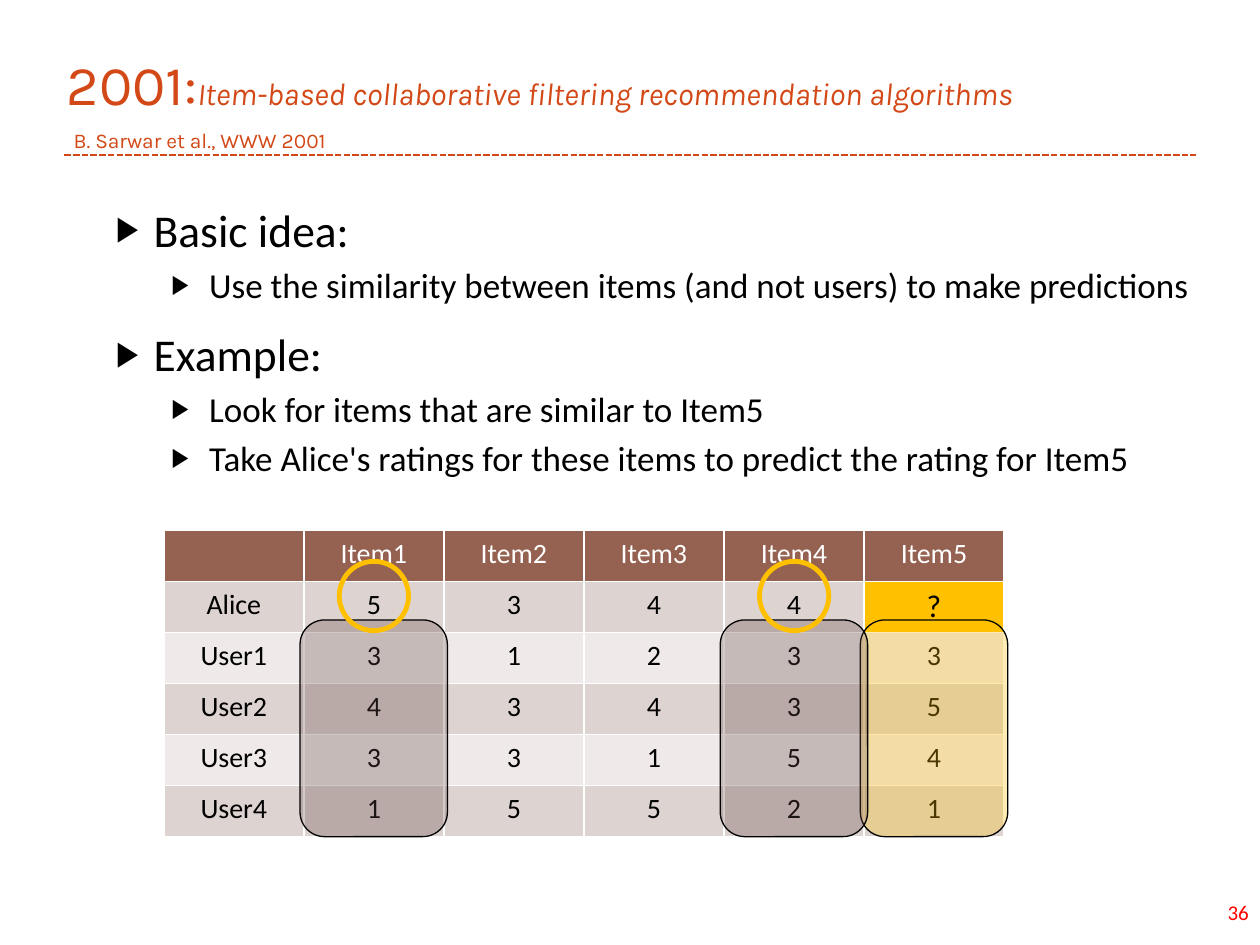
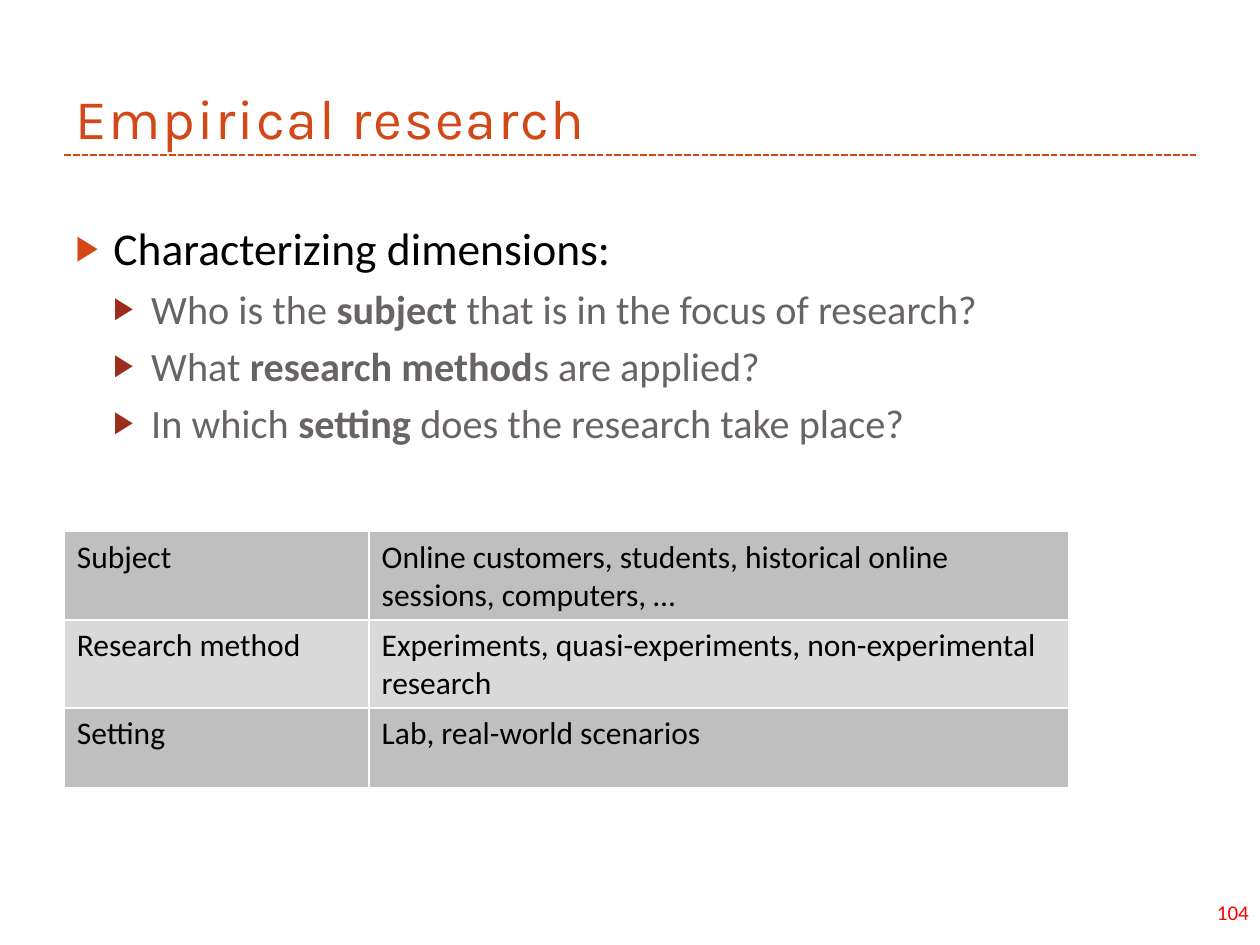
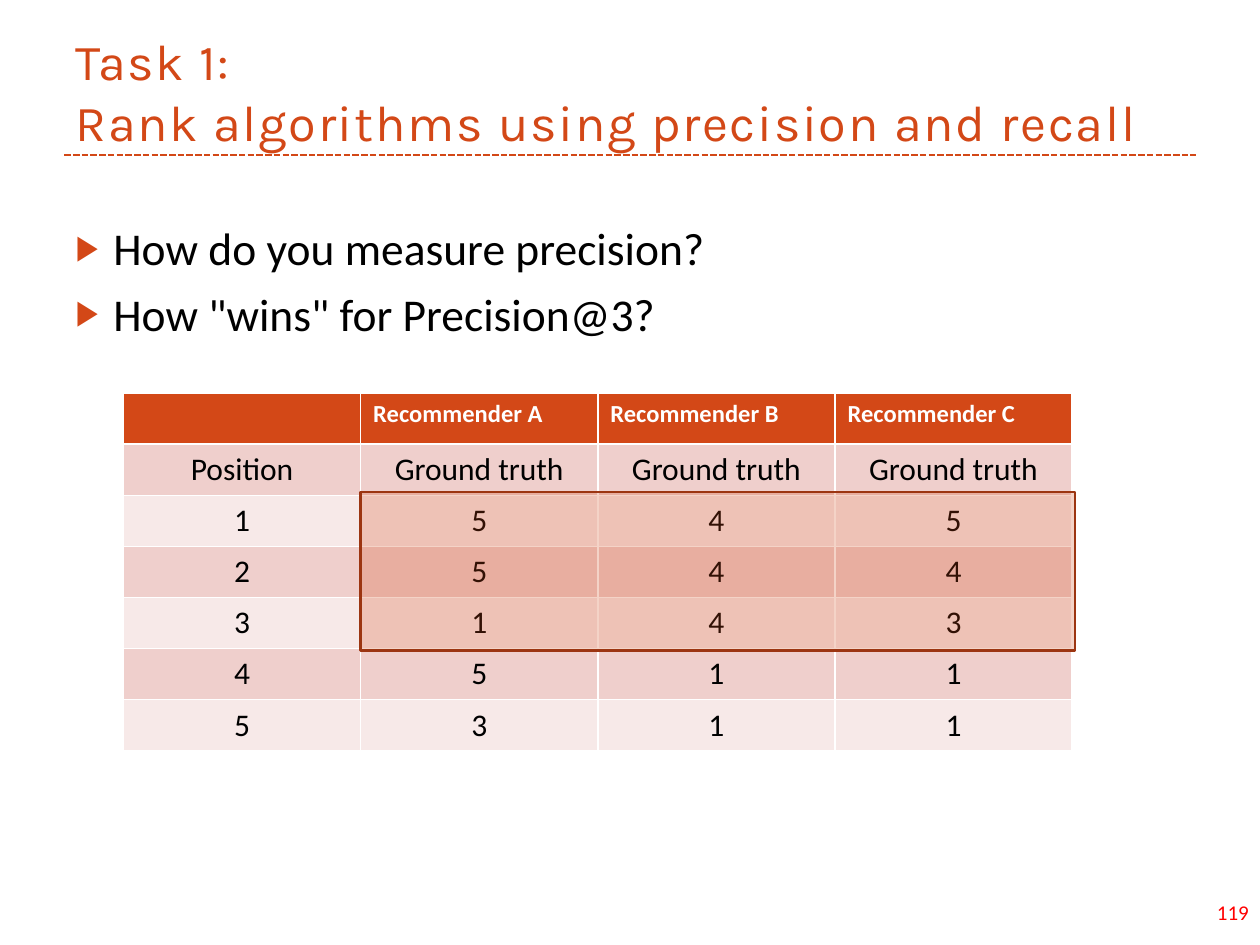
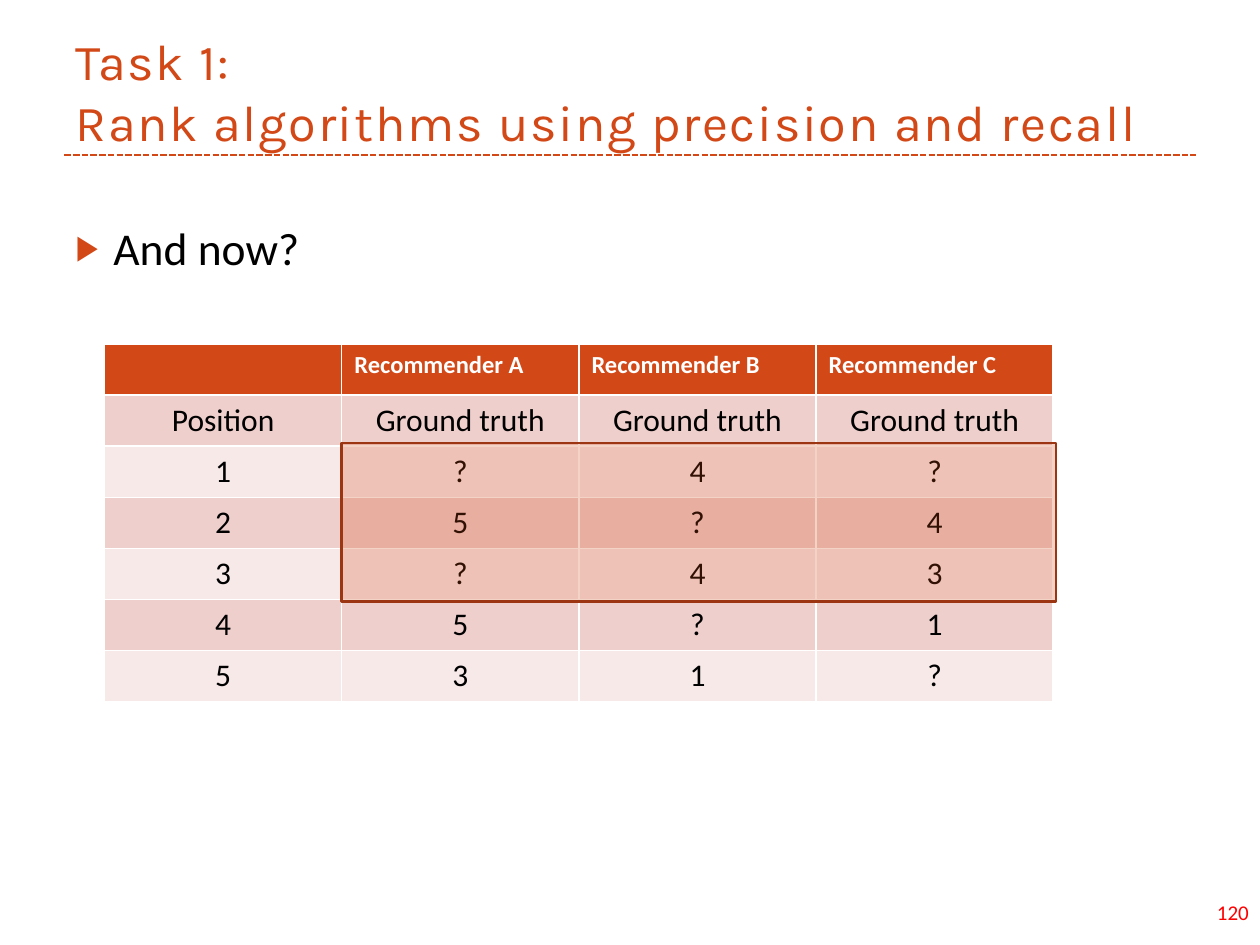
from collections import namedtuple

from lxml import etree
from pptx import Presentation
from pptx import util as u
from pptx.dml import color
from pptx.enum import dml, shapes, text
from pptx.oxml import ns

Box = namedtuple("Box", "left top width height")
Style = namedtuple("Style", "head bands head_size size head_bold head_align align")

WIDTH, HEIGHT = u.Inches(10), u.Inches(7.5)
COLUMNS = 100
ORANGE, RUST, GREY, BROWN = "D34817", "9B2D1F", "696464", "644646"
GOLD, BLACK, WHITE, RED = "FFC000", "000000", "FFFFFF", "FF0000"
BODY_FONT, TITLE_FONT = "Calibri", "Karla"
CENTER, LEFT = text.PP_ALIGN.CENTER, text.PP_ALIGN.LEFT

TITLE_BOX = Box(5, 1.7, 90, 10.8)
BODY_BOX = Box(5, 17, 90, 54)
NUMBER_BOX = Box(87.3, 70.9, 12.8, 3)
RULE_BOX = Box(5.1, 12.3, 89.8, 0)

RATINGS = Style("956251", ("DDD3D0", "EFEAE9"), 16, 16, False, CENTER, CENTER)
PLAIN = Style(None, ("BFBFBF", "D9D9D9"), 18, 18, False, LEFT, LEFT)
RANKING = Style(ORANGE, ("EFCFCC", "F7E9E8"), 14, 18, True, LEFT, CENTER)

TASK_TITLE = [[("Task 1: ", 28.8, False)],
              [("Rank algorithms using precision and recall", 28.8, False)]]


def rgb(value):
    """Turn a hex string into a colour."""
    return color.RGBColor.from_string(value)


def grid(*cells):
    """Turn grid columns into slide lengths."""
    return [round(WIDTH * cell / COLUMNS) for cell in cells]


def set_font(font, name, size, hex_color, bold=None):
    """Format a paragraph or span font."""
    font.name, font.size, font.bold = name, u.Pt(size), bold
    font.color.rgb = rgb(hex_color)


def place(shape, box):
    """Move a shape to its box."""
    shape.left, shape.top, shape.width, shape.height = grid(*box)


def add_title(page, box, lines, spacing):
    """Fill the title placeholder with lines of (words, size, italic)."""
    place(page.shapes.title, box)
    frame = page.shapes.title.text_frame
    frame.auto_size = text.MSO_AUTO_SIZE.NONE
    frame.vertical_anchor = text.MSO_ANCHOR.BOTTOM
    para = frame.paragraphs[0]
    para.alignment = LEFT
    set_font(para.font, TITLE_FONT, lines[0][0][1], ORANGE)
    for index, line in enumerate(lines):
        if index:
            para.add_line_break()
        for words, size, italic in line:
            span = para.add_run()
            span.text = words
            set_font(span.font, TITLE_FONT, size, ORANGE)
            span.font.italic = italic
            span.font._element.set("spc", str(spacing))


def add_bullet(para, indent, hang, hex_color):
    """Give a paragraph a triangle bullet and a hanging indent."""
    props = para._p.get_or_add_pPr()
    props.set("marL", str(grid(indent)[0]))
    props.set("indent", str(-grid(hang)[0]))
    tint = etree.SubElement(props, ns.qn("a:buClr"))
    etree.SubElement(tint, ns.qn("a:srgbClr"), val=hex_color)
    etree.SubElement(props, ns.qn("a:buSzPct"), val="76000")
    etree.SubElement(props, ns.qn("a:buChar"), char="▶")


def add_list(page, box, items, levels):
    """Fill the body placeholder with (level, words); *stars* mark bold."""
    body = page.placeholders[1]
    place(body, box)
    frame = body.text_frame
    frame.auto_size = text.MSO_AUTO_SIZE.NONE
    for index, (level, words) in enumerate(items):
        size, hex_color, bullet_color, indent, gap = levels[level]
        para = frame.add_paragraph() if index else frame.paragraphs[0]
        para.level = level
        para.space_before = u.Pt(gap if index else 0)
        add_bullet(para, indent, 3, bullet_color)
        set_font(para.font, BODY_FONT, size, hex_color)
        for part, piece in enumerate(words.split("*")):
            span = para.add_run()
            span.text = piece
            if part % 2:
                span.font.bold = True


def add_number(page, box, number):
    """Write the slide number."""
    label = page.shapes.add_textbox(*grid(*box))
    label.text_frame.word_wrap = True
    para = label.text_frame.paragraphs[0]
    para.text = str(number)
    para.alignment = text.PP_ALIGN.RIGHT
    set_font(para.font, BODY_FONT, 12, RED)


def add_rule(page, box):
    """Draw the dashed line under the title."""
    left, top, width, height = grid(*box)
    rule = page.shapes.add_connector(
        shapes.MSO_CONNECTOR.STRAIGHT, left, top, left + width, top + height)
    rule.line.color.rgb = rgb(ORANGE)
    rule.line.width = u.Pt(1.25)
    rule.line.dash_style = dml.MSO_LINE.SQUARE_DOT
    etree.SubElement(rule._element.spPr, ns.qn("a:effectLst"))


def add_page(deck, number, title, items, levels,
             title_box=TITLE_BOX, body_box=BODY_BOX, spacing=100):
    """Add a slide with the shared title, rule, list and number."""
    page = deck.slides.add_slide(deck.slide_layouts[1])
    add_rule(page, RULE_BOX)
    add_number(page, NUMBER_BOX, number)
    add_list(page, body_box, items, levels)
    add_title(page, title_box, title, spacing)
    return page


def add_grid_table(page, box, rows, style, shares=None):
    """Add a table whose columns split the box by shares."""
    shares = shares or [1] * len(rows[0])
    table = page.shapes.add_table(len(rows), len(shares), *grid(*box)).table
    table.first_row = style.head is not None
    for column, share in zip(table.columns, shares):
        column.width = grid(box.width * share / sum(shares))[0]
    for r, row in enumerate(rows):
        is_head = table.first_row and r == 0
        band = style.bands[(r - table.first_row) % 2]
        for c, words in enumerate(row):
            cell = table.cell(r, c)
            cell.fill.solid()
            cell.fill.fore_color.rgb = rgb(style.head if is_head else band)
            para = cell.text_frame.paragraphs[0]
            para.text = words
            para.alignment = style.head_align if is_head else style.align
            set_font(para.font, BODY_FONT,
                     style.head_size if is_head else style.size,
                     WHITE if is_head else BLACK,
                     is_head and style.head_bold)
    return table


def add_mark(page, kind, box, line, weight, fill=None, opacity=0):
    """Draw a see-through outline over table cells."""
    mark = page.shapes.add_shape(kind, *grid(*box))
    mark.shadow.inherit = False
    mark.line.color.rgb = rgb(line)
    mark.line.width = u.Pt(weight)
    if fill is None:
        mark.fill.background()
        return
    mark.fill.solid()
    mark.fill.fore_color.rgb = rgb(fill)
    tint = mark._element.spPr.find(ns.qn("a:solidFill"))[0]
    etree.SubElement(tint, ns.qn("a:alpha"), val=str(opacity * 1000))


def add_ratings(page, box):
    """Show the rating table with the similar items marked."""
    rows = [["", "Item1", "Item2", "Item3", "Item4", "Item5"],
            ["Alice", "5", "3", "4", "4", "?"],
            ["User1", "3", "1", "2", "3", "3"],
            ["User2", "4", "3", "4", "3", "5"],
            ["User3", "3", "3", "1", "5", "4"],
            ["User4", "1", "5", "5", "2", "1"]]
    table = add_grid_table(page, box, rows, RATINGS)
    unknown = table.cell(1, 5)
    unknown.fill.fore_color.rgb = rgb(GOLD)
    unknown.text_frame.paragraphs[0].font.size = u.Pt(18)
    column = box.width / len(rows[0])
    for index, fill in ((5, GOLD), (1, BROWN), (4, BROWN)):
        column_box = Box(box.left + index * column - 0.3, box.top + 7.1, 11.7, 17.2)
        add_mark(page, shapes.MSO_SHAPE.ROUNDED_RECTANGLE, column_box,
                 BLACK, 0.75, fill, 29)
    ring = 5.5
    for index in (1, 4):
        left = box.left + (index + 0.5) * column - ring / 2
        add_mark(page, shapes.MSO_SHAPE.OVAL,
                 Box(left, box.top + 2.45, ring, ring), GOLD, 2.75)


def add_ranking(page, box, ranks):
    """Show the recommender table with the top three positions marked."""
    rows = [["", "Recommender A", "Recommender B", "Recommender C"],
            ["Position"] + ["Ground truth"] * 3]
    rows += [[str(place_no), *marks] for place_no, marks in enumerate(ranks, 1)]
    add_grid_table(page, box, rows, RANKING)
    column = box.width / len(rows[0])
    add_mark(page, shapes.MSO_SHAPE.RECTANGLE,
             Box(box.left + column, box.top + 7.85, 56.7, 12.6),
             "9C3511", 1.5, ORANGE, 24)


def main():
    """Build the four slides."""
    deck = Presentation()
    deck.slide_width, deck.slide_height = WIDTH, HEIGHT
    levels = [(26, BLACK, ORANGE, 3, 6), (23, GREY, RUST, 6, 5)]
    dark_levels = [(26, BLACK, BLACK, 4.5, 12), (20, BLACK, BLACK, 8.9, 4)]

    page = add_page(
        deck, 36,
        [[("2001:", 32, False),
          ("Item-based collaborative filtering recommendation algorithms", 18, True)],
         [(" ", 18, True), ("B. Sarwar et al., WWW 2001", 12, False)]],
        [(0, "Basic idea:"),
         (1, "Use the similarity between items (and not users) to make predictions"),
         (0, "Example:"),
         (1, "Look for items that are similar to Item5"),
         (1, "Take Alice's ratings for these items to predict the rating for Item5")],
        dark_levels, Box(4.3, 0.3, 95.7, 12.5), Box(6.7, 15.5, 90, 53.2), 0)
    add_ratings(page, Box(13, 42.1, 66.7, 24.3))

    page = add_page(
        deck, 104, [[("Empirical research", 32, False)]],
        [(0, "Characterizing dimensions:"),
         (1, "Who is the *subject* that is in the focus of research?"),
         (1, "What *research method*s are applied?"),
         (1, "In which *setting* does the research take place?")], levels)
    add_grid_table(
        page, Box(5.1, 42.2, 79.7, 18.9),
        [["Subject", "Online customers, students, historical online sessions, computers, …"],
         ["Research method", "Experiments, quasi-experiments, non-experimental research"],
         ["Setting", "Lab, real-world scenarios"]], PLAIN, (2.42, 5.55))

    page = add_page(deck, 119, TASK_TITLE,
                    [(0, "How do you measure precision?"),
                     (0, "How \"wins\" for Precision@3?")], levels)
    add_ranking(page, Box(9.8, 31.2, 75.3, 28.4), ("545", "544", "143", "511", "311"))

    page = add_page(deck, 120, TASK_TITLE, [(0, "And now?")], levels)
    add_ranking(page, Box(8.3, 27.3, 75.3, 28.4), ("?4?", "5?4", "?43", "5?1", "31?"))

    deck.save("out.pptx")


if __name__ == "__main__":
    main()
